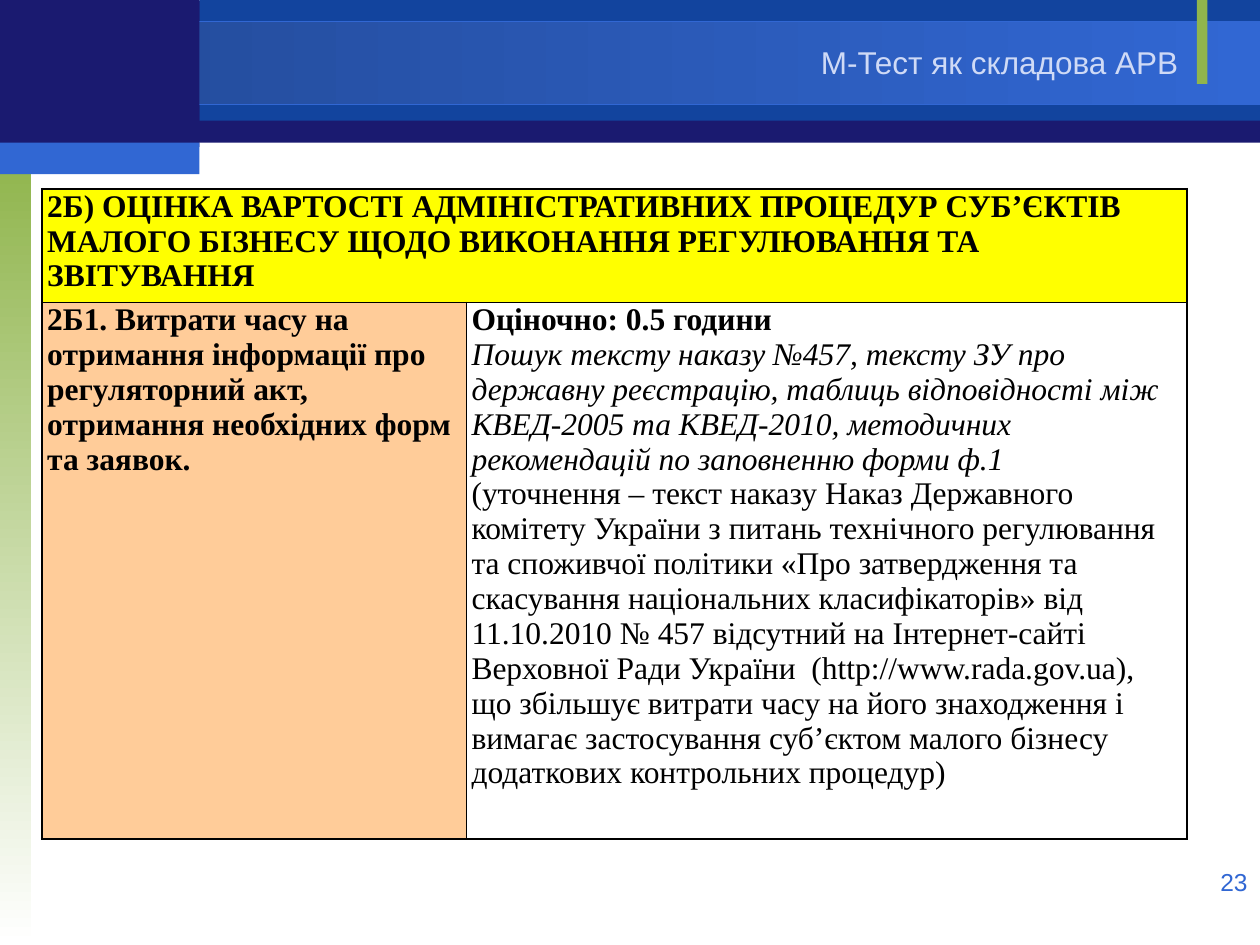
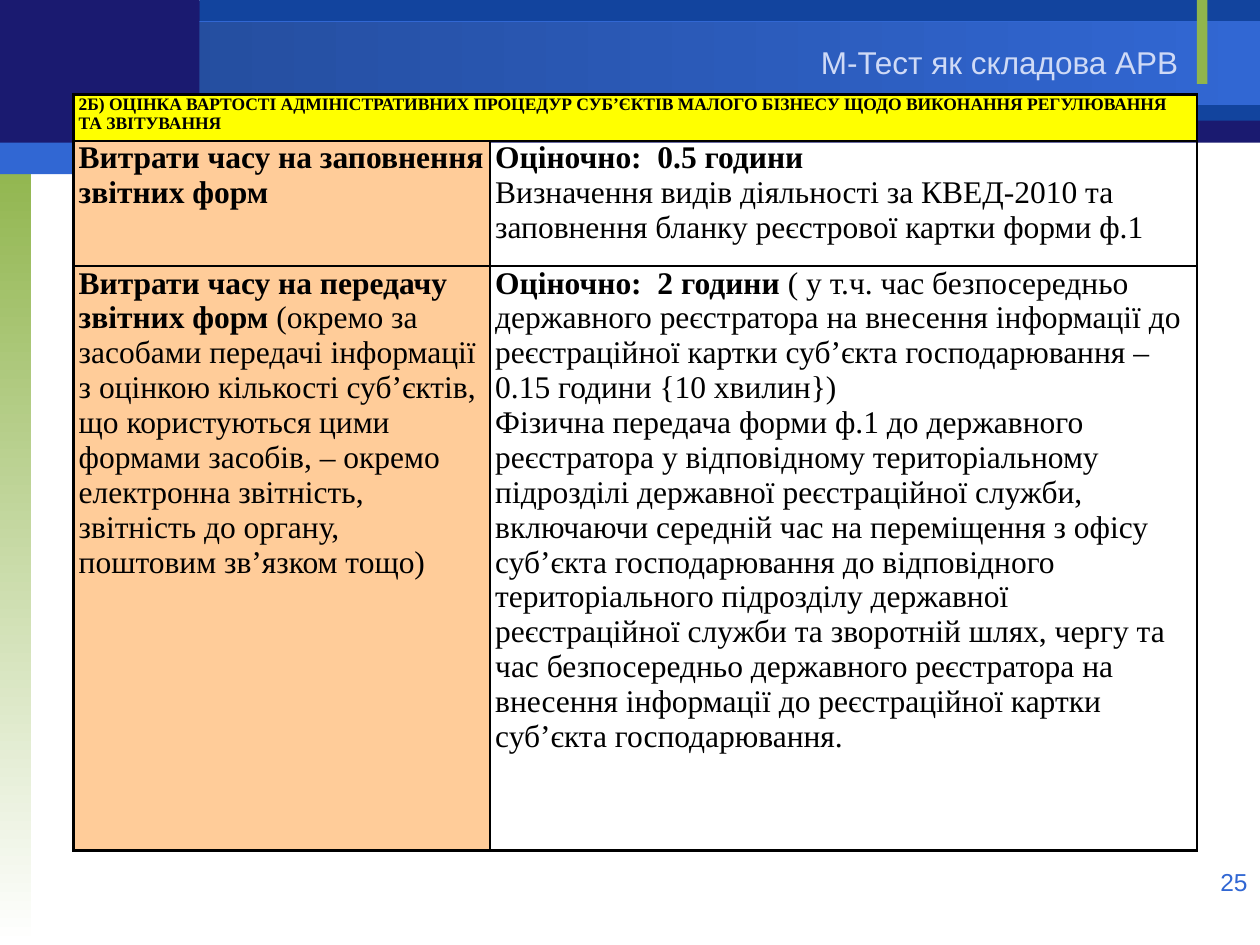
from collections import namedtuple
from dataclasses import dataclass
from lxml.etree import SubElement
from pptx import Presentation
from pptx.dml.color import RGBColor
from pptx.enum.shapes import MSO_SHAPE
from pptx.enum.text import PP_ALIGN
from pptx.oxml.ns import qn
from pptx.util import Pt


@dataclass(frozen=True)
class Theme:
    """Colours, fonts and type sizes of the deck."""
    navy: str = "1A1A70"
    deep: str = "12449E"
    dusk: str = "234A97"
    blue: str = "3167D3"
    green: str = "90B54D"
    white: str = "FFFFFF"
    black: str = "000000"
    pale: str = "CFDAF6"
    yellow: str = "FFFF00"
    peach: str = "FFCC99"
    sans: str = "Arial"
    serif: str = "Times New Roman"
    body: int = 18
    small: int = 10
    page: int = 14
    thick: float = 1.5
    thin: float = 1


T = Theme()
Box = namedtuple("Box", "x y w h")
PAGE = Box(0, 0, 720, 540)
TITLE = "М-Тест як складова АРВ"
HEAD = ("2Б) ОЦІНКА ВАРТОСТІ АДМІНІСТРАТИВНИХ ПРОЦЕДУР СУБ’ЄКТІВ МАЛОГО "
        "БІЗНЕСУ ЩОДО ВИКОНАННЯ РЕГУЛЮВАННЯ ТА ЗВІТУВАННЯ")

SEARCH = [
    ([[("2Б1. Витрати часу на отримання інформації про регуляторний акт, "
        "отримання необхідних форм та заявок.", "b")]],
     [[("Оціночно: 0.5 години", "b")],
      [("Пошук тексту наказу №457, тексту ЗУ про державну реєстрацію, таблиць "
        "відповідності між КВЕД-2005 та КВЕД-2010, методичних рекомендацій по "
        "заповненню форми ф.1", "i")],
      [("(уточнення – текст наказу Наказ Державного комітету України з питань "
        "технічного регулювання та споживчої політики «Про затвердження та "
        "скасування національних класифікаторів» від 11.10.2010 № 457 "
        "відсутний на Інтернет-сайті Верховної Ради України  "
        "(http://www.rada.gov.ua), що збільшує витрати часу на його "
        "знаходження і вимагає застосування суб’єктом малого бізнесу "
        "додаткових контрольних процедур)", "")]]),
]
REPORT = [
    ([[("Витрати часу на заповнення звітних форм", "b")]],
     [[("Оціночно:  0.5 години", "b")],
      [("Визначення видів діяльності за КВЕД-2010 та заповнення бланку "
        "реєстрової картки форми ф.1", "")]]),
    ([[("Витрати часу на передачу звітних форм ", "b"),
       ("(окремо за засобами передачі інформації з оцінкою кількості "
        "суб’єктів, що користуються цими формами засобів, – окремо "
        "електронна звітність, звітність до органу, поштовим зв’язком тощо)",
        "")]],
     [[("Оціночно:  2 години", "b"),
       (" ( у т.ч. час безпосередньо державного реєстратора на внесення "
        "інформації до реєстраційної картки суб’єкта господарювання – 0.15 "
        "години {10 хвилин})", "")],
      [("Фізична передача форми ф.1 до державного реєстратора у відповідному "
        "територіальному підрозділі державної реєстраційної служби, включаючи "
        "середній час на переміщення з офісу суб’єкта господарювання до "
        "відповідного територіального підрозділу державної реєстраційної "
        "служби та зворотній шлях, чергу та час безпосередньо державного "
        "реєстратора на внесення інформації до реєстраційної картки суб’єкта "
        "господарювання.", "")]]),
]


def write(frame, paras, font=T.sans, size=T.body, tint=T.black, align=None):
    """Fill a text frame with paragraphs of (text, style) runs."""
    for k, runs in enumerate(paras):
        para = frame.paragraphs[0] if k == 0 else frame.add_paragraph()
        para.alignment = align
        for text, style in runs:
            run = para.add_run()
            run.text = text
            face = run.font
            face.name, face.size = font, Pt(size)
            face.bold, face.italic = "b" in style, "i" in style
            face.color.rgb = RGBColor.from_string(tint)


def label(slide, box, text, wrap=True, **form):
    """Add a one-line text box."""
    frame = slide.shapes.add_textbox(*map(Pt, box)).text_frame
    frame.word_wrap = wrap
    write(frame, [[(text, "")]], **form)


def band(slide, box, tints, angle=0, edge=None):
    """Add a rectangle with a plain or two-colour fill."""
    shape = slide.shapes.add_shape(MSO_SHAPE.RECTANGLE, *map(Pt, box))
    shape.shadow.inherit = False
    fill = shape.fill
    if len(tints) == 1:
        fill.solid()
        fill.fore_color.rgb = RGBColor.from_string(tints[0])
    else:
        fill.gradient()
        fill.gradient_angle = angle
        for stop, tint in zip(fill.gradient_stops, tints):
            stop.color.rgb = RGBColor.from_string(tint)
    if edge:
        shape.line.color.rgb = RGBColor.from_string(edge)
        shape.line.width = Pt(0.75)
    else:
        shape.line.fill.background()


def frame_page(slide, box, page):
    """Draw the bands, title and page number shared by all slides."""
    x, y, w, h = box
    side = 114
    band(slide, Box(x, y + 0.5, w, 81), [T.navy])
    band(slide, Box(x + side, y, w - side, 69), [T.deep])
    band(slide, Box(x, y + 12.3, w, 47.5), [T.dusk, T.blue], edge=T.blue)
    band(slide, Box(x, y + 90, 18, h - 90), [T.green, T.white], angle=270)
    band(slide, Box(x + 684, y, 6, 48), [T.green])
    band(slide, Box(x, y, side, 84), [T.navy])
    band(slide, Box(x, y + 81.5, side, 18), [T.blue])
    label(slide, Box(x + w - 168, y + 492, 168, 37.5), str(page),
          size=T.page, tint=T.blue, align=PP_ALIGN.RIGHT)
    label(slide, Box(x + 462, y + 21, 221, 29), TITLE, wrap=False, tint=T.pale)


def rule(cell, **sides):
    """Set the widths of a cell's black borders."""
    props = cell._tc.get_or_add_tcPr()
    for k, side in enumerate("LRTB"):
        line = props.makeelement(qn(f"a:ln{side}"), w=str(Pt(sides[side])))
        fill = SubElement(line, qn("a:solidFill"))
        SubElement(fill, qn("a:srgbClr"), val=T.black)
        props.insert(k, line)


def paint(cell, tint, paras, size=T.body):
    """Fill a cell with its colour and text."""
    cell.margin_left = cell.margin_right = Pt(3)
    cell.margin_top = cell.margin_bottom = 0
    if tint:
        cell.fill.solid()
        cell.fill.fore_color.rgb = RGBColor.from_string(tint)
    else:
        cell.fill.background()
    write(cell.text_frame, paras, font=T.serif, size=size)


def grid(slide, spot, cols, rows, items, size, base):
    """Draw a cost table with a merged heading row."""
    box = Box(*spot, sum(cols), sum(rows))
    table = slide.shapes.add_table(
        len(rows), len(cols), *map(Pt, box)).table
    table.first_row = table.horz_banding = False
    for col, wide in zip(table.columns, cols):
        col.width = Pt(wide)
    for row, tall in zip(table.rows, rows):
        row.height = Pt(tall)
    head = table.cell(0, 0)
    head.merge(table.cell(0, 1))
    paint(head, T.yellow, [[(HEAD, "b")]], size)
    for r, pair in enumerate(items, 1):
        for c, tint in enumerate((T.peach, None)):
            paint(table.cell(r, c), tint, pair[c])
    last = len(rows) - 1
    for r in range(len(rows)):
        for c in range(len(cols)):
            rule(table.cell(r, c),
                 L=T.thin if c else T.thick,
                 R=T.thick if c or r == 0 else T.thin,
                 T=T.thin if r else T.thick,
                 B=base if r == last else T.thin)


def main():
    """Build and save the deck."""
    deck = Presentation()
    deck.slide_width, deck.slide_height = Pt(PAGE.w), Pt(PAGE.h)
    plans = [
        (23, (24, 108), (242.5, 412), (47.5, 306.5), SEARCH, T.body, T.thin),
        (25, (42, 54), (238, 404), (26.5, 71.5, 334), REPORT, T.small, T.thick),
    ]
    for page, *plan in plans:
        slide = deck.slides.add_slide(deck.slide_layouts[6])
        frame_page(slide, PAGE, page)
        grid(slide, *plan)
    deck.save("out.pptx")


if __name__ == "__main__":
    main()
